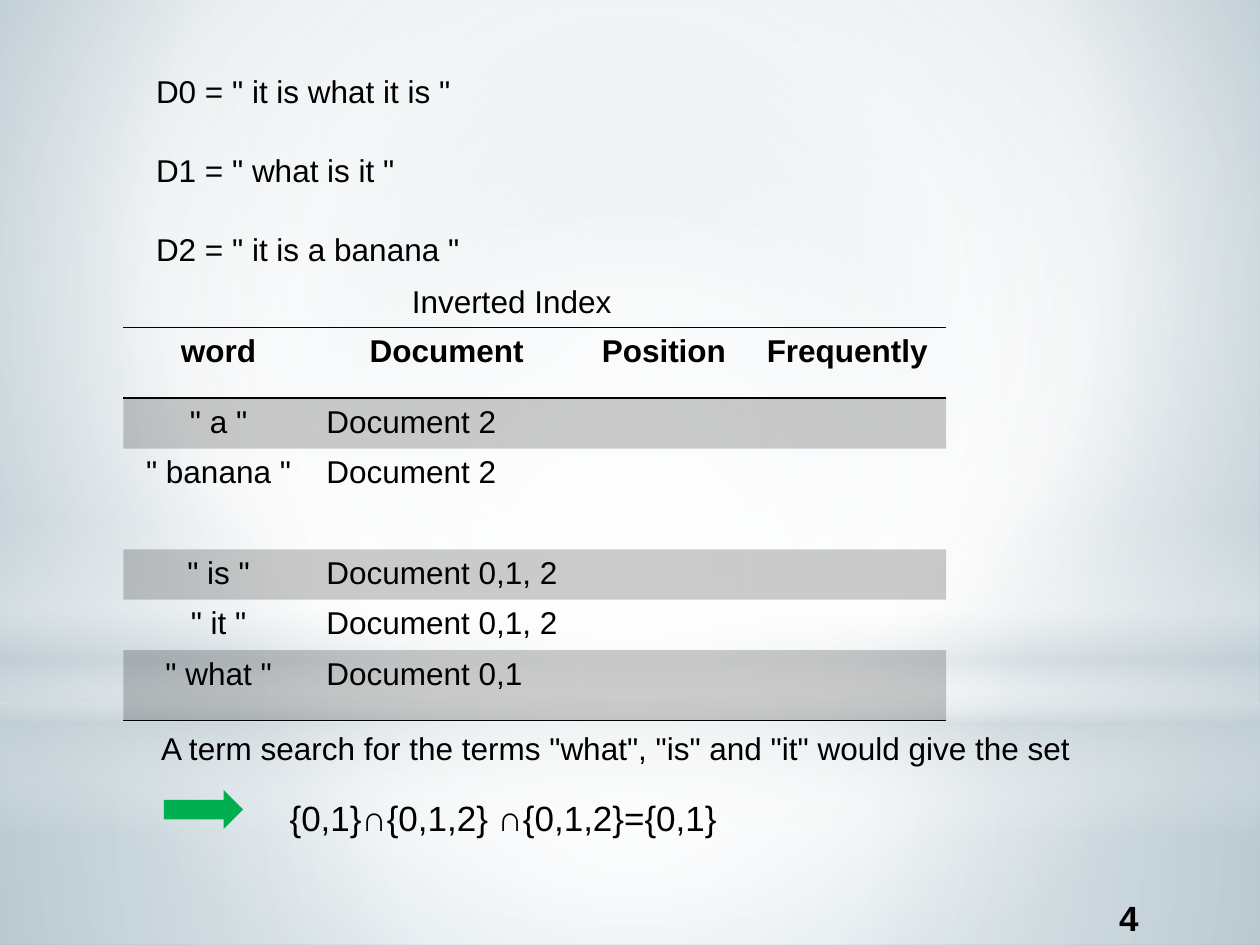
import pptx
import pptx.util
import pptx.dml.color
import pptx.enum.shapes
import pptx.enum.text
import pptx.oxml.ns
from lxml import etree

qn = pptx.oxml.ns.qn
SHAPE = pptx.enum.shapes.MSO_SHAPE
ALIGN = pptx.enum.text.PP_ALIGN
ANCHOR = pptx.enum.text.MSO_ANCHOR
AUTO_SIZE = pptx.enum.text.MSO_AUTO_SIZE

COLORS = {"ink": "000000", "white": "FFFFFF", "mist": "C5D1D7",
          "sky": "B8CAD3", "steel": "8FAEBD", "arrow": "00B050"}
PLAIN_TABLE = "{2D5ABB26-0587-4C30-8999-92F81FD0307C}"
CENTER = (50, 50, 50, 50)


def rgb(name):
    return pptx.dml.color.RGBColor.from_string(COLORS[name])


def add_alpha(color, percent):
    etree.SubElement(color, qn("a:alpha"), val=str(percent * 1000))


class IndexSlide:
    """Slide on a grid of 100 columns by 75 rows."""
    font = "Arial"
    size = 18

    def __init__(self, prs):
        self.cell = prs.slide_width // 100
        self.slide = prs.slides.add_slide(prs.slide_layouts[6])

    def grid(self, *lengths):
        return [pptx.util.Emu(round(n * self.cell)) for n in lengths]

    def style(self, paragraph, align=ALIGN.LEFT, size=None, bold=False):
        paragraph.alignment = align
        paragraph.font.name = self.font
        paragraph.font.size = pptx.util.Pt(size or self.size)
        paragraph.font.bold = bold
        paragraph.font.color.rgb = rgb("ink")

    def set_gradient(self, fill, holder, stops, focus=None):
        """Stops are (position, colour, opacity); without focus it runs down."""
        fill.gradient()
        grad = holder.find(qn("a:gradFill"))
        for child in list(grad):
            grad.remove(child)
        stop_list = etree.SubElement(grad, qn("a:gsLst"))
        for position, name, opacity in stops:
            stop = etree.SubElement(stop_list, qn("a:gs"), pos=str(position * 1000))
            color = etree.SubElement(stop, qn("a:srgbClr"), val=COLORS[name])
            if opacity < 100:
                add_alpha(color, opacity)
        if focus:
            radial = etree.SubElement(grad, qn("a:path"), {"path": "circle"})
            sides = {side: str(n * 1000) for side, n in zip("ltrb", focus)}
            etree.SubElement(radial, qn("a:fillToRect"), sides)
        else:
            etree.SubElement(grad, qn("a:lin"), ang="5400000", scaled="0")

    def background(self, stops, focus):
        fill = self.slide.background.fill
        fill.solid()
        holder = self.slide.element.find(".//" + qn("p:bgPr"))
        self.set_gradient(fill, holder, stops, focus)

    def shape(self, kind, *box):
        shape = self.slide.shapes.add_shape(kind, *self.grid(*box))
        shape.shadow.inherit = False
        shape.line.fill.background()
        return shape

    def glow(self, kind, box, stops, focus=None):
        glow = self.shape(kind, *box)
        self.set_gradient(glow.fill, glow.element.spPr, stops, focus)

    def arrow(self, *box):
        arrow = self.shape(SHAPE.RIGHT_ARROW, *box)
        arrow.fill.solid()
        arrow.fill.fore_color.rgb = rgb("arrow")

    def text(self, words, box, wrap=False, anchor=ANCHOR.TOP, **style):
        frame = self.slide.shapes.add_textbox(*self.grid(*box)).text_frame
        frame.word_wrap = wrap
        frame.auto_size = AUTO_SIZE.NONE
        frame.vertical_anchor = anchor
        frame.text = words
        self.style(frame.paragraphs[0], **style)

    def rule(self, cell, side):
        line = etree.Element(qn("a:" + side), w=str(pptx.util.Pt(1)))
        fill = etree.SubElement(line, qn("a:solidFill"))
        etree.SubElement(fill, qn("a:srgbClr"), val=COLORS["ink"])
        properties = cell._tc.get_or_add_tcPr()
        borders = [c for c in properties if c.tag in (qn("a:lnT"), qn("a:lnB"))]
        properties.insert(len(borders), line)

    def table(self, left, top, widths, heights, rows):
        box = self.grid(left, top, sum(widths), sum(heights))
        table = self.slide.shapes.add_table(len(heights), len(widths), *box).table
        table._tbl.tblPr.find(qn("a:tableStyleId")).text = PLAIN_TABLE
        for column, width in zip(table.columns, self.grid(*widths)):
            column.width = width
        for row, height in zip(table.rows, self.grid(*heights)):
            row.height = height
        last = len(rows) - 1
        for r, row in enumerate(rows):
            for c, cell in enumerate(table.rows[r].cells):
                cell.text = row[c] if c < len(row) else ""
                centered = r == 0 or c == 0
                self.style(cell.text_frame.paragraphs[0], bold=r == 0,
                           align=ALIGN.CENTER if centered else ALIGN.LEFT)
                # Every other row is shaded
                if r % 2:
                    cell.fill.solid()
                    cell.fill.fore_color.rgb = rgb("ink")
                    add_alpha(cell._tc.tcPr.find(".//" + qn("a:srgbClr")), 20)
                else:
                    cell.fill.background()
                # Rules around the header and under the table
                if r == 0:
                    self.rule(cell, "lnT")
                if r in (0, last):
                    self.rule(cell, "lnB")


def main():
    prs = pptx.Presentation()
    prs.slide_width = pptx.util.Inches(10)
    prs.slide_height = pptx.util.Inches(7.5)
    page = IndexSlide(prs)

    # Backdrop: sky, floor, horizon and central light
    page.background([(0, "sky", 100), (60, "white", 100), (100, "steel", 100)],
                    (20, 10, 20, 60))
    page.glow(SHAPE.RECTANGLE, (0, 55.8, 100, 19.2),
              [(0, "white", 91), (37, "white", 76), (100, "mist", 79)], CENTER)
    page.glow(SHAPE.RECTANGLE, (0, 0, 100, 55.8),
              [(0, "white", 89), (48, "white", 62), (100, "mist", 79)], CENTER)
    page.glow(SHAPE.RECTANGLE, (0, 41.2, 100, 25),
              [(0, "white", 0), (29, "white", 30), (45, "mist", 40),
               (55, "white", 26), (65, "mist", 60), (100, "white", 0)])
    page.glow(SHAPE.OVAL, (0, 17.5, 100, 55.8),
              [(0, "white", 100), (56, "white", 0)], CENTER)

    # Slide number
    page.text("4", (79.6, 70.8, 20, 4), wrap=True, anchor=ANCHOR.MIDDLE,
              align=ALIGN.CENTER, size=20, bold=True)

    # Documents
    documents = ["it is what it is", "what is it", "it is a banana"]
    for n, document in enumerate(documents):
        page.text(f'D{n} = " {document} "', (11.4, 5.2 + 6.3 * n, 26.3, 4))

    # Inverted index
    page.text("Inverted Index", (31.7, 21.9, 18, 4))
    page.table(9.8, 26, [15.1, 21.1, 13.4, 15.7], [5.6, 4, 8, 4, 4, 5.6], [
        ["word", "Document", "Position", "Frequently"],
        ['" a "', "Document 2"],
        ['" banana "', "Document 2"],
        ['" is "', "Document 0,1, 2"],
        ['" it "', "Document 0,1, 2"],
        ['" what "', "Document 0,1"],
    ])

    # Search result
    page.text('A term search for the terms "what", "is" and "it" would give the set',
              (11.8, 57.4, 75, 4), wrap=True)
    page.arrow(13, 62.7, 6.3, 3.1)
    page.text("{0,1}∩{0,1,2} ∩{0,1,2}={0,1}", (22, 62.7, 36.1, 4.4), size=20)

    prs.save("out.pptx")


if __name__ == "__main__":
    main()
